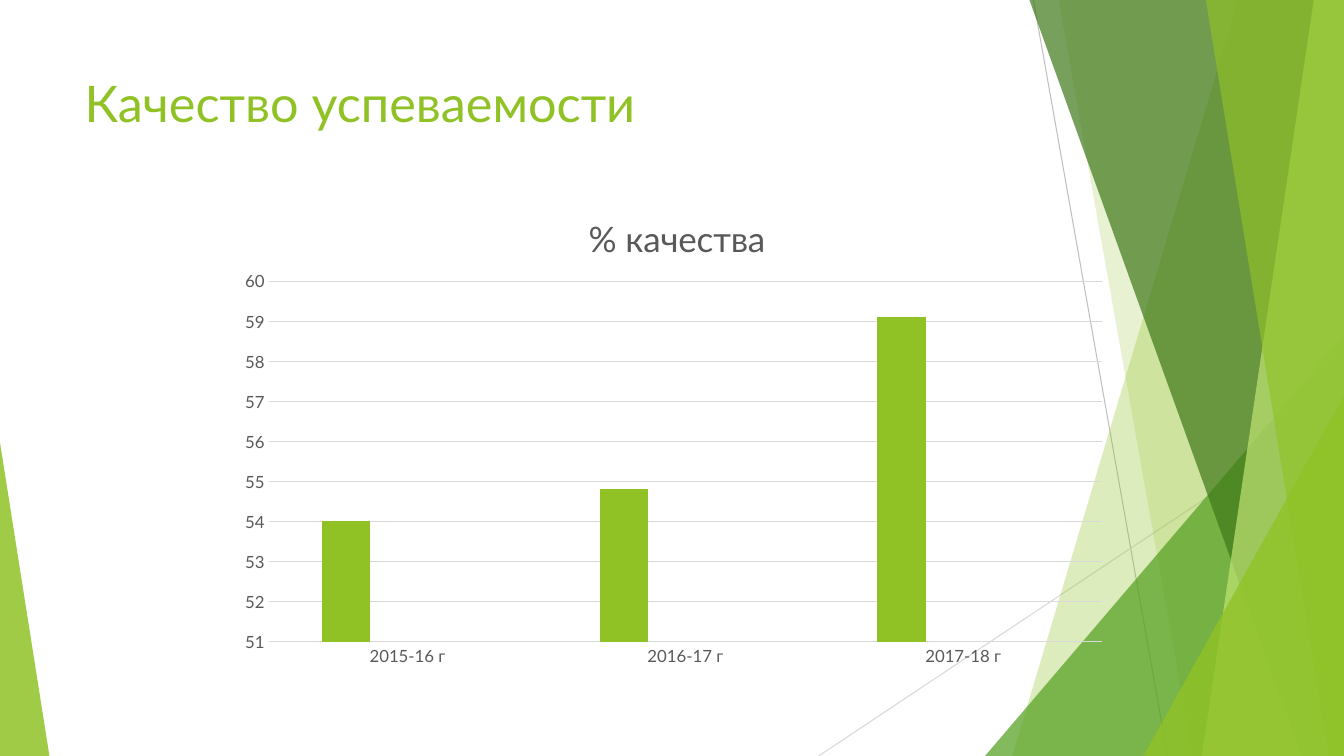
from dataclasses import dataclass

from lxml.etree import SubElement
from pptx import Presentation
from pptx.chart.data import CategoryChartData
from pptx.dml.color import RGBColor
from pptx.enum.chart import XL_CHART_TYPE, XL_TICK_MARK
from pptx.enum.shapes import MSO_CONNECTOR, MSO_SHAPE
from pptx.enum.text import MSO_ANCHOR
from pptx.oxml.ns import qn
from pptx.util import Inches, Pt

COLUMNS, ROWS = 13.33, 7.5
CELL = Inches(1)
FONT = "Lato"
COLORS = {
    "lime": "90C226",
    "green": "54A021",
    "forest": "3F7819",
    "pale": "C0E474",
    "gold": "E6B91E",
    "text": "595959",
    "rule": "D9D9D9",
    "edge": "BFBFBF",
}


@dataclass
class Box:
    """A region measured in columns and rows of the slide grid."""

    left: float
    top: float
    width: float
    height: float

    def place(self, column, row):
        """Return the slide position of a grid point inside the region."""
        return round((self.left + column) * CELL), round((self.top + row) * CELL)

    def frame(self):
        """Return left, top, width and height in slide units."""
        return *self.place(0, 0), round(self.width * CELL), round(self.height * CELL)


def color(name):
    """Return the named colour."""
    return RGBColor.from_string(COLORS[name])


def style_font(font, size, name):
    """Set typeface, size and colour."""
    font.name = FONT
    font.size = Pt(size)
    font.bold = False
    font.color.rgb = color(name)


def style_line(line, name):
    """Make a thin line of the named colour."""
    line.color.rgb = color(name)
    line.width = Pt(0.75)


def paint(shape, name, opacity):
    """Fill a shape with a see-through colour and no outline."""
    shape.shadow.inherit = False
    shape.line.fill.background()
    shape.fill.solid()
    shape.fill.fore_color.rgb = color(name)
    tint = shape.element.spPr.find(qn("a:solidFill"))[0]
    SubElement(tint, qn("a:alpha"), val=str(opacity * 1000))


def add_ray(page, box, start, end, name):
    """Draw a thin straight line between two points of the box."""
    ray = page.shapes.add_connector(
        MSO_CONNECTOR.STRAIGHT, *box.place(*start), *box.place(*end)
    )
    style_line(ray.line, name)
    SubElement(ray.element.spPr, qn("a:effectLst"))


def add_band(page, box, top, bottom, name, opacity):
    """Fill the box to the right of a slanted edge."""
    builder = page.shapes.build_freeform(*box.place(top, 0), scale=1.0)
    corners = [(box.width, 0), (box.width, box.height), (bottom, box.height)]
    builder.add_line_segments([box.place(*corner) for corner in corners])
    paint(builder.convert_to_shape(), name, opacity)


def add_wedge(page, box, apex, name, opacity):
    """Fill the box with a right triangle whose apex is at the given side."""
    wedge = page.shapes.add_shape(MSO_SHAPE.ISOSCELES_TRIANGLE, *box.frame())
    wedge.adjustments[0] = apex
    paint(wedge, name, opacity)


def add_facets(page, box):
    """Layer the slanted facets along the right side."""
    add_ray(page, box, (2.25, 0), (3.58, box.height), "edge")
    add_ray(page, box, (box.width, 4.03), (0.12, box.height), "rule")
    facets = [
        (add_band, 4.28, 2.04, "lime", 30),
        (add_band, 2.5, 3.83, "lime", 20),
        (add_wedge, 3.56, 4.17, "green", 72),
        (add_band, 2.21, 4.91, "forest", 70),
        (add_band, 5.03, 3.92, "pale", 70),
        (add_band, 3.96, 5.18, "lime", 65),
        (add_wedge, 1.99, 3.57, "lime", 80),
    ]
    for draw, first, second, name, opacity in facets:
        if draw is add_band:
            add_band(page, box, first, second, name, opacity)
        else:
            corner = Box(
                box.left + box.width - first,
                box.top + box.height - second,
                first,
                second,
            )
            add_wedge(page, corner, 1, name, opacity)


def add_heading(page, box):
    """Write the slide heading."""
    frame = page.shapes.add_textbox(*box.frame()).text_frame
    frame.word_wrap = True
    frame.vertical_anchor = MSO_ANCHOR.TOP
    frame.text = "Качество успеваемости"
    style_font(frame.paragraphs[0].runs[0].font, 36, "lime")


def set_layout(parent, index, **shares):
    """Fix a chart part at shares of the chart's size."""
    for old in parent.findall(qn("c:layout")):
        parent.remove(old)
    layout = SubElement(parent, qn("c:layout"))
    parent.insert(index, layout)
    manual = SubElement(layout, qn("c:manualLayout"))
    for tag, value in shares.items():
        SubElement(manual, qn(f"c:{tag}"), val=str(value))


def add_quality_chart(page, box):
    """Draw the column chart of quality by school year."""
    data = CategoryChartData()
    data.categories = ["2015-16 г", "2016-17 г", "2017-18 г"]
    data.add_series("Series 1", [54, 54.8, 59.1])
    data.add_series("Series 2", [None] * 3)
    data.add_series("Series 3", [None] * 3)
    chart = page.shapes.add_chart(
        XL_CHART_TYPE.COLUMN_CLUSTERED, *box.frame(), data
    ).chart
    style_font(chart.font, 12, "text")
    chart.has_legend = False

    title = chart.chart_title
    title.text_frame.text = "% качества"
    style_font(title.text_frame.paragraphs[0].runs[0].font, 25, "text")
    set_layout(title.element if hasattr(title, "element") else title._element, 1,
               xMode="edge", yMode="edge", x=0.4, y=0.05)

    plot = chart.plots[0]
    plot.gap_width = 219
    plot.overlap = -27
    plot.vary_by_categories = False
    for series, name in zip(plot.series, ["lime", "green", "gold"]):
        series.format.fill.solid()
        series.format.fill.fore_color.rgb = color(name)

    for axis in (chart.category_axis, chart.value_axis):
        axis.major_tick_mark = XL_TICK_MARK.NONE
        axis.minor_tick_mark = XL_TICK_MARK.NONE
        style_font(axis.tick_labels.font, 12, "text")
    style_line(chart.category_axis.format.line, "rule")
    values = chart.value_axis
    values.minimum_scale, values.maximum_scale, values.major_unit = 51, 60, 1
    values.format.line.fill.background()
    style_line(values.major_gridlines.format.line, "rule")

    plot_area = chart.element.find(".//" + qn("c:plotArea")) if hasattr(
        chart, "element") else chart._chartSpace.find(".//" + qn("c:plotArea"))
    set_layout(plot_area, 0, layoutTarget="inner", xMode="edge", yMode="edge",
               x=0.05, y=0.2, w=0.93, h=0.73)


def main():
    """Build the slide and save it."""
    deck = Presentation()
    deck.slide_width, deck.slide_height = Inches(COLUMNS), Inches(ROWS)
    page = deck.slides.add_slide(deck.slide_layouts[6])
    add_facets(page, Box(8, 0, COLUMNS - 8, ROWS))
    add_wedge(page, Box(0, 4.39, 0.49, 3.11), 0, "lime", 85)
    add_heading(page, Box(0.74, 0.67, 9.4, 1.44))
    add_quality_chart(page, Box(2.22, 1.81, 8.89, 4.9))
    deck.save("out.pptx")


if __name__ == "__main__":
    main()
